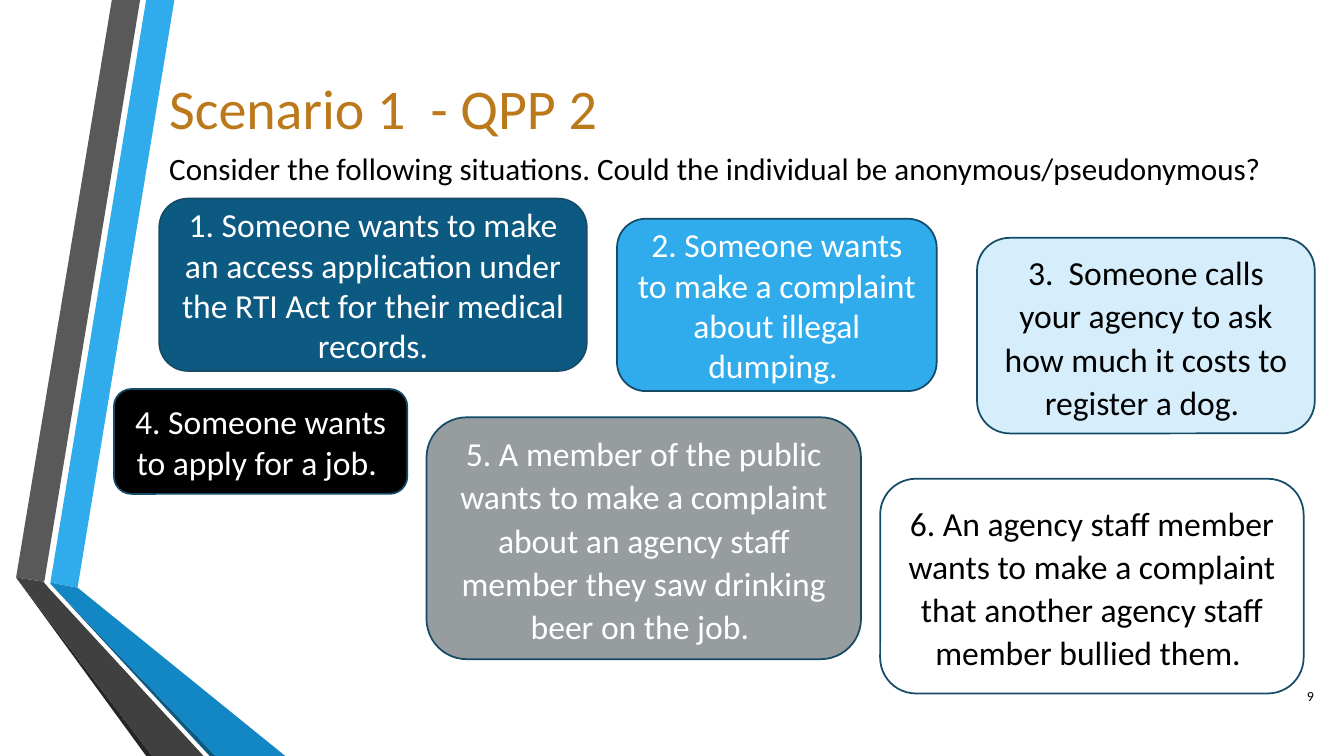
import pptx
import pptx.util
import pptx.dml.color
import pptx.enum.shapes
import pptx.enum.text

Pt = pptx.util.Pt
Rgb = pptx.dml.color.RGBColor.from_string
Align = pptx.enum.text.PP_ALIGN
Anchor = pptx.enum.text.MSO_ANCHOR
Round = pptx.enum.shapes.MSO_SHAPE.ROUNDED_RECTANGLE

hues = {
    "sky": "30ACEC", "blue": "1287C3", "deep": "0C5A82", "pale": "D6EEFB",
    "edge": "154B67", "gold": "BC791C", "black": "000000", "white": "FFFFFF",
    "ash": "595959", "coal": "404040", "soot": "262626", "grey": "979D9F",
}

deck = pptx.Presentation()
deck.slide_width = pptx.util.Inches(13.33)
deck.slide_height = pptx.util.Inches(7.5)
cols, rows = 1333, 750
cell = deck.slide_width / cols
slide = deck.slides.add_slide(deck.slide_layouts[6])


def place(*spots):
    return [round(spot * cell) for spot in spots]


def write(shape, text, size, hue, anchor, form):
    frame = shape.text_frame
    looks = {"word_wrap": True, "vertical_anchor": anchor}
    for key, value in looks.items():
        setattr(frame, key, value)
    para = frame.paragraphs[0]
    for key, value in form.items():
        setattr(para, key, value)
    run = para.add_run()
    run.text = text
    for key, value in {"name": "Calibri", "size": Pt(size)}.items():
        setattr(run.font, key, value)
    run.font.color.rgb = Rgb(hues[hue])


bands = [
    ("sky", [(50, 578), (77, 583), (173, 0), (145, 0)]),
    ("ash", [(139, 0), (111, 0), (16, 573), (44, 577)]),
    ("soot", [(16, 573), (145, rows), (151, rows)]),
    ("deep", [(50, 579), (208, rows), (214, rows)]),
    ("blue", [(50, 579), (214, rows), (283, rows), (77, 583), (50, 578)]),
    ("coal", [(202, rows), (48, 583), (43, 577), (16, 573), (151, rows)]),
]
for hue, dots in bands:
    pen = slide.shapes.build_freeform(*dots[0], scale=cell)
    pen.add_line_segments(dots[1:], close=True)
    band = pen.convert_to_shape()
    band.shadow.inherit = False
    band.fill.solid()
    band.fill.fore_color.rgb = Rgb(hues[hue])
    band.line.fill.background()

labels = [
    ((158, 62, 1096, 88), "Scenario 1  - QPP 2", 40, "gold", Anchor.MIDDLE,
     {"alignment": Align.LEFT}),
    ((158, 141, 1125, 63),
     "Consider the following situations. Could the individual be anonymous/pseudonymous?",
     22.2, "black", Anchor.TOP, {"line_spacing": 1.07, "space_after": Pt(8)}),
    ((1253, 670, 60, 40), "9", 10, "black", Anchor.MIDDLE,
     {"alignment": Align.RIGHT}),
]
for spot, *words in labels:
    write(slide.shapes.add_textbox(*place(*spot)), *words)

cards = [
    ((158, 197, 424, 171), "deep", "white", 1, 0,
     "1. Someone wants to make an access application under the RTI Act for their medical records."),
    ((612, 217, 317, 171), "sky", "white", 1, 0,
     "2. Someone wants to make a complaint about illegal dumping. "),
    ((969, 236, 335, 194), "pale", "black", 1.07, 0,
     "3.  Someone calls your agency to ask how much it costs to register a dog. "),
    ((113, 386, 291, 104), "black", "white", 1, 0,
     "4. Someone wants to apply for a job. "),
    ((423, 414, 431, 240), "grey", "white", 1.07, 0,
     "5. A member of the public wants to make a complaint about an agency staff member they saw drinking beer on the job. "),
    ((873, 475, 420, 213), None, "black", 1.07, 8,
     "6. An agency staff member wants to make a complaint that another agency staff member bullied them. "),
]
for spot, hue, ink, lead, after, text in cards:
    card = slide.shapes.add_shape(Round, *place(*spot))
    card.shadow.inherit = False
    if hue:
        card.fill.solid()
        card.fill.fore_color.rgb = Rgb(hues[hue])
    else:
        card.fill.background()
    card.line.color.rgb = Rgb(hues["edge"])
    card.line.width = Pt(1.25)
    form = {"alignment": Align.CENTER, "line_spacing": lead, "space_after": Pt(after)}
    write(card, text, 24, ink, Anchor.MIDDLE, form)

deck.save("out.pptx")
